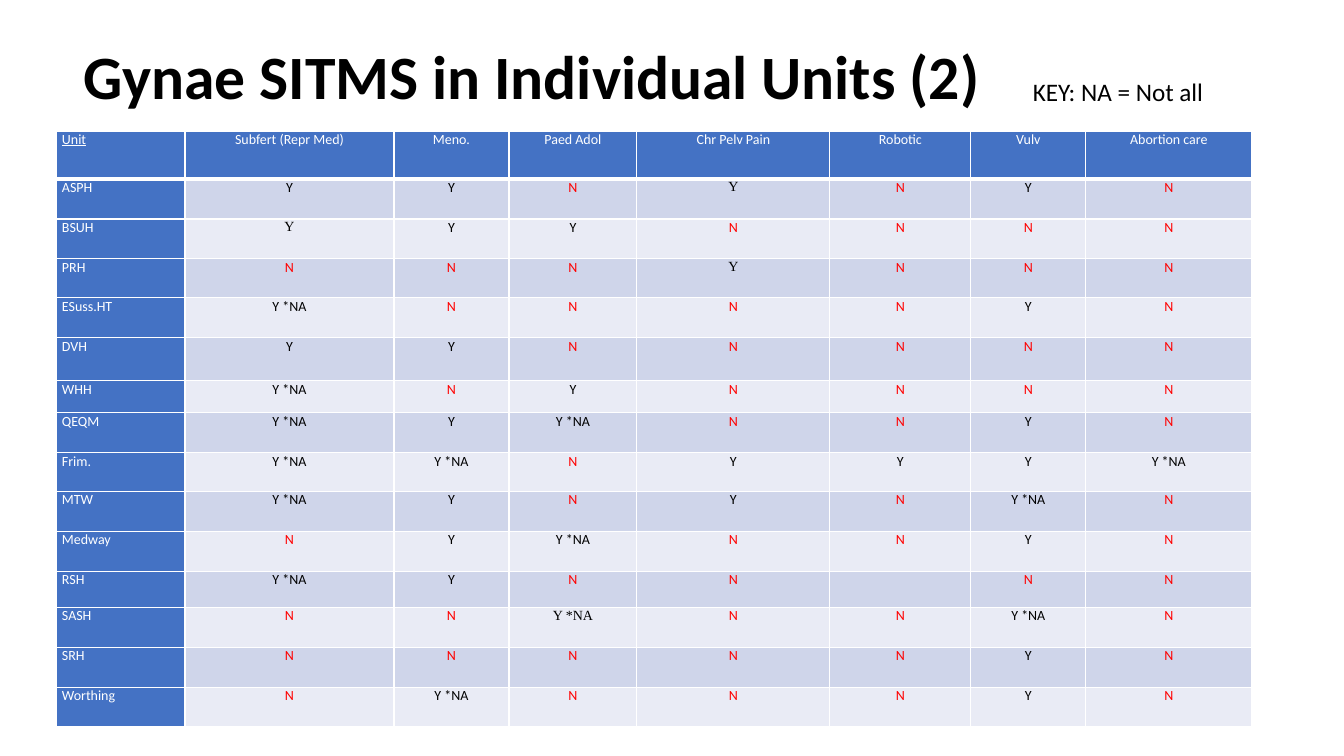
import pptx
import pptx.dml.color
import pptx.enum.text
import pptx.oxml
import pptx.oxml.ns
import pptx.util

# Content
TITLE = "Gynae SITMS in Individual Units (2)"
KEY = "KEY: NA = Not all"
HEADER = ("Unit", "Subfert (Repr Med)", "Meno.", "Paed Adol",
          "Chr Pelv Pain", "Robotic", "Vulv", "Abortion care")
UNITS = [
    ("ASPH", "Y", "Y", "N", "Y", "N", "Y", "N"),
    ("BSUH", "Y", "Y", "Y", "N", "N", "N", "N"),
    ("PRH", "N", "N", "N", "Y", "N", "N", "N"),
    ("ESuss.HT", "Y *NA", "N", "N", "N", "N", "Y", "N"),
    ("DVH", "Y", "Y", "N", "N", "N", "N", "N"),
    ("WHH", "Y *NA", "N", "Y", "N", "N", "N", "N"),
    ("QEQM", "Y *NA", "Y", "Y *NA", "N", "N", "Y", "N"),
    ("Frim.", "Y *NA", "Y *NA", "N", "Y", "Y", "Y", "Y *NA"),
    ("MTW", "Y *NA", "Y", "N", "Y", "N", "Y *NA", "N"),
    ("Medway", "N", "Y", "Y *NA", "N", "N", "Y", "N"),
    ("RSH", "Y *NA", "Y", "N", "N", "", "N", "N"),
    ("SASH", "N", "N", "Y *NA", "N", "N", "Y *NA", "N"),
    ("SRH", "N", "N", "N", "N", "N", "Y", "N"),
    ("Worthing", "N", "Y *NA", "N", "N", "N", "Y", "N"),
]
SERIF_CELLS = {("ASPH", "Chr Pelv Pain"), ("BSUH", "Subfert (Repr Med)"),
               ("PRH", "Chr Pelv Pain"), ("SASH", "Paed Adol")}

# Theme and layout, lengths in px
THEME = {
    "font": "Calibri", "serif": "Times New Roman",
    "title": 44, "key": 18, "cell": 10,
    "text": "000000", "no": "FF0000", "white": "FFFFFF",
    "head": "4472C4", "bands": ("CFD5EA", "E9EBF5"),
}
SLIDE = (1344, 756)
TITLE_BOX = (74, 40, 1178, 79)
KEY_BOX = (1023, 71, 229, 40)
TABLE_AT = (56, 131)
COLS = (129, 209, 115, 128, 193, 141, 115, 166)
ROWS = (48, 40, 40, 39, 40, 43, 32, 40, 39, 40, 40, 36, 40, 40, 39)
CELL_INSET = 6
EMU_PER_PX = 12192000 / SLIDE[0]

MIDDLE = pptx.enum.text.MSO_ANCHOR.MIDDLE
TOP = pptx.enum.text.MSO_ANCHOR.TOP
CENTER = pptx.enum.text.PP_ALIGN.CENTER
LEFT = pptx.enum.text.PP_ALIGN.LEFT


def px(n):
    return pptx.util.Emu(round(n * EMU_PER_PX))


def add_run(p, text, size, color, **extra):
    r = p.add_run()
    r.text = text
    fmt = {"name": THEME["font"], "size": pptx.util.Pt(size), "bold": False, **extra}
    for name, value in fmt.items():
        setattr(r.font, name, value)
    r.font.color.rgb = pptx.dml.color.RGBColor.from_string(color)


def add_text(s, box, text, size, anchor, **extra):
    tf = s.shapes.add_textbox(*map(px, box)).text_frame
    tf.word_wrap = True
    tf.vertical_anchor = anchor
    add_run(tf.paragraphs[0], text, size, THEME["text"], **extra)
    return tf


def add_borders(cell, bottom):
    tc_pr = cell._tc.get_or_add_tcPr()
    for side, width in (("L", 1), ("R", 1), ("T", 1), ("B", bottom)):
        tc_pr.append(pptx.oxml.parse_xml(
            f'<a:ln{side} {pptx.oxml.ns.nsdecls("a")} w="{pptx.util.Pt(width)}">'
            f'<a:solidFill><a:srgbClr val="{THEME["white"]}"/></a:solidFill>'
            f'</a:ln{side}>'))


def fill_cell(cell, row, col, unit, text):
    is_head = row == 0 or col == 0
    inset = px(CELL_INSET)
    layout = {"margin_left": inset, "margin_right": inset,
              "margin_top": 0, "margin_bottom": 0, "vertical_anchor": TOP}
    for name, value in layout.items():
        setattr(cell, name, value)
    add_borders(cell, bottom=3 if row == 0 else 1)
    fill = THEME["head"] if is_head else THEME["bands"][(row - 1) % 2]
    cell.fill.solid()
    cell.fill.fore_color.rgb = pptx.dml.color.RGBColor.from_string(fill)

    p = cell.text_frame.paragraphs[0]
    p.alignment = CENTER if col else LEFT
    if not text:
        return
    color = THEME["white"] if is_head else THEME["no"] if text == "N" else THEME["text"]
    font = THEME["serif"] if (unit, HEADER[col]) in SERIF_CELLS else THEME["font"]
    add_run(p, text, THEME["cell"], color, name=font, underline=row == col == 0)


def main():
    prs = pptx.Presentation()
    prs.slide_width, prs.slide_height = map(px, SLIDE)
    s = prs.slides.add_slide(prs.slide_layouts[6])

    # Table of units
    rows = [HEADER, *UNITS]
    size = (sum(COLS), sum(ROWS))
    table = s.shapes.add_table(len(rows), len(COLS), *map(px, TABLE_AT + size)).table
    for column, width in zip(table.columns, COLS):
        column.width = px(width)
    for i, (values, height) in enumerate(zip(rows, ROWS)):
        table.rows[i].height = px(height)
        for j, text in enumerate(values):
            fill_cell(table.cell(i, j), i, j, values[0], text)

    # Title and key
    title = add_text(s, TITLE_BOX, TITLE, THEME["title"], MIDDLE, bold=True)
    title.paragraphs[0].line_spacing = 0.9
    add_text(s, KEY_BOX, KEY, THEME["key"], TOP)

    prs.save("out.pptx")


if __name__ == "__main__":
    main()
